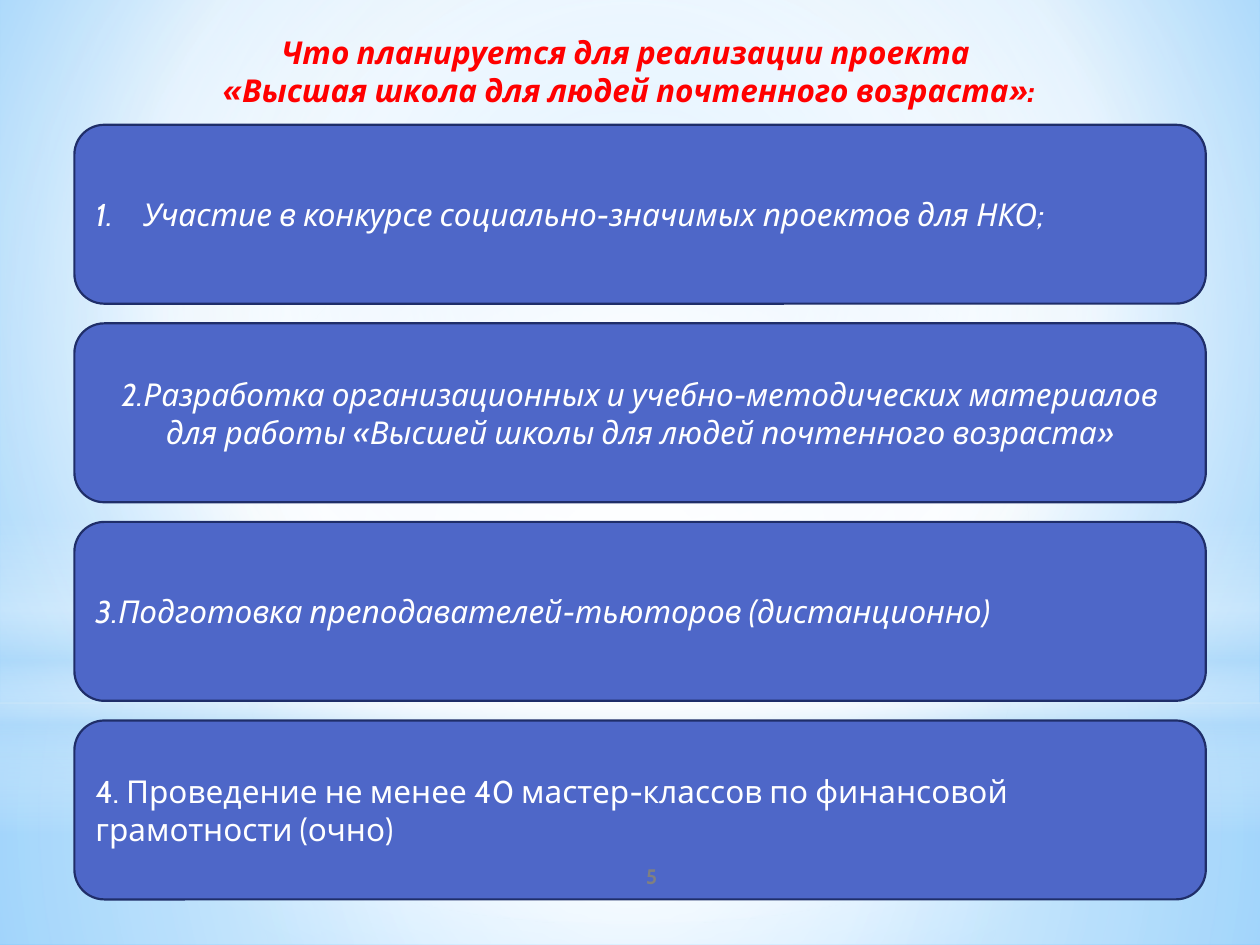
from pptx import Presentation
from pptx.dml.color import RGBColor
from pptx.enum.shapes import MSO_SHAPE
from pptx.enum.text import MSO_ANCHOR, MSO_AUTO_SIZE, PP_ALIGN
from pptx.oxml import parse_xml
from pptx.oxml.ns import nsdecls, qn
from pptx.util import Inches, Pt

RED = RGBColor(0xFF, 0x00, 0x00)
WHITE = RGBColor(0xFF, 0xFF, 0xFF)
GRAY = RGBColor(0x80, 0x80, 0x80)
BLUE = RGBColor(0x4E, 0x67, 0xC8)
NAVY = RGBColor(0x1F, 0x2E, 0x69)
SKY = RGBColor(0xB4, 0xDC, 0xFA)
SKY_LIGHT = RGBColor(0x9E, 0xD5, 0xFF)
SKY_DEEP = RGBColor(0x5B, 0xB9, 0xFF)


def set_gradient(fill, root, stops, focus=None):
    """Fill with (position, colour, opacity) stops: around focus, or downwards without one."""
    fill.gradient()
    old = next(root.iter(qn("a:gradFill")))
    gs = "".join(
        f'<a:gs pos="{pos * 1000}"><a:srgbClr val="{color}">'
        f'<a:alpha val="{alpha * 1000}"/></a:srgbClr></a:gs>'
        for pos, color, alpha in stops)
    if focus:
        sides = " ".join(f'{k}="{v * 1000}"' for k, v in zip("ltrb", focus))
        shade = f'<a:path path="circle"><a:fillToRect {sides}/></a:path>'
    else:
        shade = '<a:lin ang="5400000" scaled="0"/>'
    old.getparent().replace(old, parse_xml(
        f'<a:gradFill {nsdecls("a")} rotWithShape="1"><a:gsLst>{gs}</a:gsLst>{shade}</a:gradFill>'))


def write(p, text, **font):
    """Add a run in the slide's font with the given font values."""
    r = p.add_run()
    r.text = text
    color = font.pop("color")
    for name, value in {"name": "Cabin", "size": Pt(18), **font}.items():
        setattr(r.font, name, value)
    r.font.color.rgb = color


prs = Presentation()
prs.slide_width, prs.slide_height = Inches(10), Inches(7.5)
s = prs.slides.add_slide(prs.slide_layouts[5])

# Sky backdrop
set_gradient(s.background.fill, s._element,
             [(0, SKY_LIGHT, 100), (60, WHITE, 100), (100, SKY_DEEP, 100)], (20, 10, 20, 60))
center = (50, 50, 50, 50)
backdrop = [
    (MSO_SHAPE.RECTANGLE, 5.58, 1.92, [(0, WHITE, 91), (37, WHITE, 76), (100, SKY, 79)], center),
    (MSO_SHAPE.RECTANGLE, 0, 5.58, [(0, WHITE, 89), (48, WHITE, 62), (100, SKY, 79)], center),
    (MSO_SHAPE.RECTANGLE, 4.12, 2.5,
     [(0, WHITE, 0), (29, WHITE, 30), (45, SKY, 40), (55, WHITE, 26), (65, SKY, 60),
      (100, WHITE, 0)], None),
    (MSO_SHAPE.OVAL, 1.75, 5.58, [(0, WHITE, 100), (56, WHITE, 0)], center),
]
for kind, top, height, stops, focus in backdrop:
    sp = s.shapes.add_shape(kind, 0, Inches(top), prs.slide_width, Inches(height))
    sp.shadow.inherit = False
    sp.line.fill.background()
    set_gradient(sp.fill, sp._element, stops, focus)

# Title, in front of the backdrop
title = s.shapes.title
s.shapes._spTree.append(title._element)
title.left, title.top, title.width, title.height = map(Inches, (0.43, 0.21, 9.13, 0.71))
tf = title.text_frame
tf.auto_size = MSO_AUTO_SIZE.NONE
tf.vertical_anchor = MSO_ANCHOR.TOP
title_lines = ["Что планируется для реализации проекта ",
               "«Высшая школа для людей почтенного возраста»:"]
for i, line in enumerate(title_lines):
    p = tf.add_paragraph() if i else tf.paragraphs[0]
    p.alignment = PP_ALIGN.CENTER
    write(p, line, color=RED, bold=True, italic=True)

# Four stacked steps
STEP_TOP, STEP_HEIGHT, STEP_PITCH = 0.99, 1.42, 1.576
steps = [
    ("Участие в конкурсе социально-значимых проектов для НКО;", PP_ALIGN.JUSTIFY, True),
    ("2.Разработка организационных и учебно-методических материалов для работы "
     "«Высшей школы для людей почтенного возраста»", PP_ALIGN.CENTER, True),
    ("3.Подготовка преподавателей-тьюторов (дистанционно)", PP_ALIGN.LEFT, True),
    ("4. Проведение не менее 40 мастер-классов по финансовой грамотности (очно)",
     PP_ALIGN.LEFT, False),
]
for row, (text, align, italic) in enumerate(steps):
    sp = s.shapes.add_shape(MSO_SHAPE.FLOWCHART_ALTERNATE_PROCESS, Inches(0.59),
                            Inches(STEP_TOP + row * STEP_PITCH), Inches(8.98), Inches(STEP_HEIGHT))
    sp.shadow.inherit = False
    sp.fill.solid()
    sp.fill.fore_color.rgb = BLUE
    sp.line.color.rgb = NAVY
    sp.line.width = Pt(1.25)
    tf = sp.text_frame
    tf.word_wrap = True
    tf.vertical_anchor = MSO_ANCHOR.MIDDLE
    p = tf.paragraphs[0]
    p.alignment = align
    write(p, text, color=WHITE, italic=italic)
    if row == 0:
        pPr = p._p.get_or_add_pPr()
        pPr.set("marL", str(Inches(0.38)))
        pPr.set("indent", str(-Inches(0.38)))
        pPr.append(parse_xml(f'<a:buFont {nsdecls("a")} typeface="+mj-lt"/>'))
        pPr.append(parse_xml(f'<a:buAutoNum {nsdecls("a")} type="arabicPeriod"/>'))

# Slide number
number = s.shapes.add_textbox(Inches(4.67), Inches(6.75), Inches(1), Inches(0.4))
tf = number.text_frame
tf.word_wrap = True
tf.vertical_anchor = MSO_ANCHOR.MIDDLE
tf.paragraphs[0].alignment = PP_ALIGN.CENTER
write(tf.paragraphs[0], "5", color=GRAY, size=Pt(12), bold=True)

prs.save("out.pptx")
